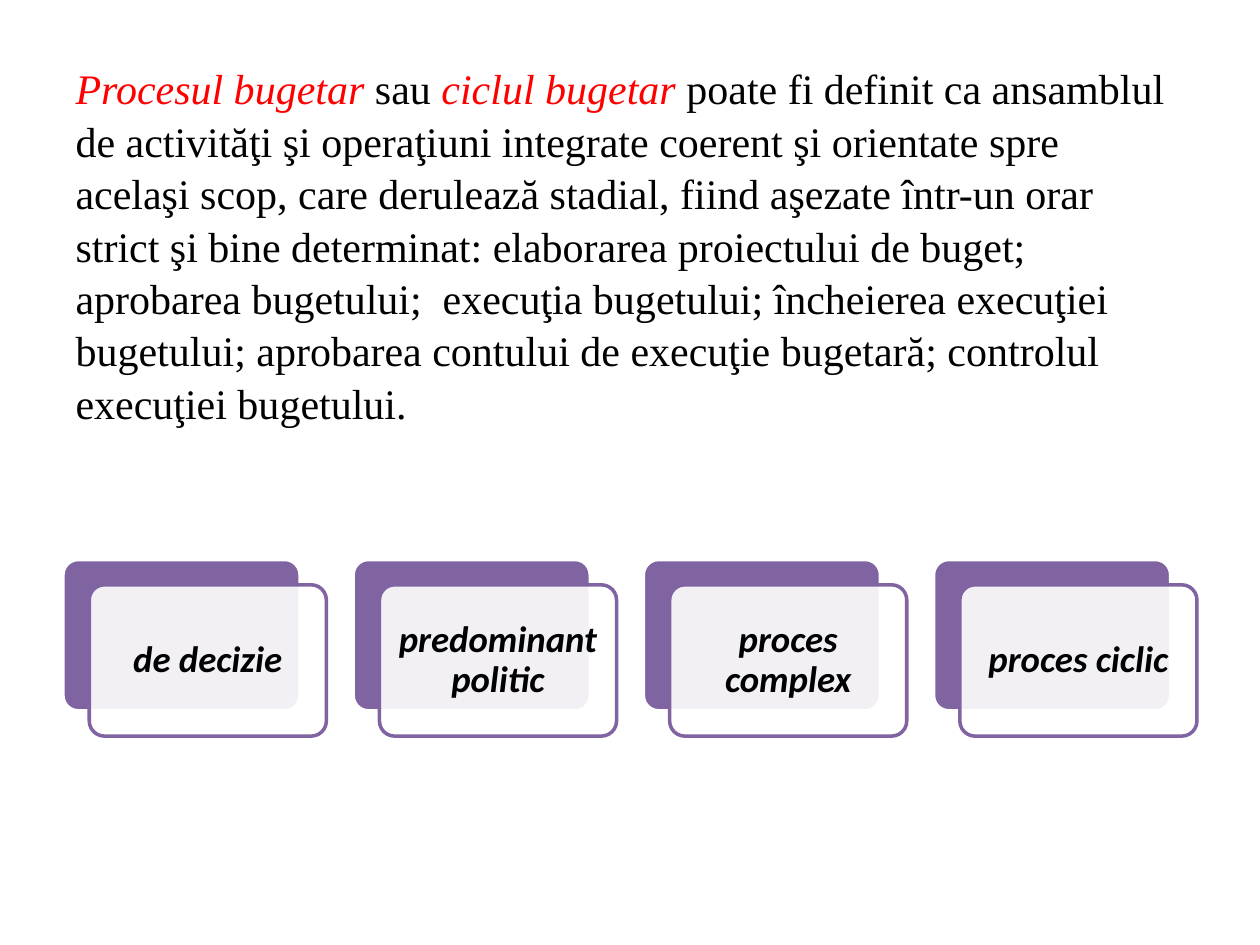
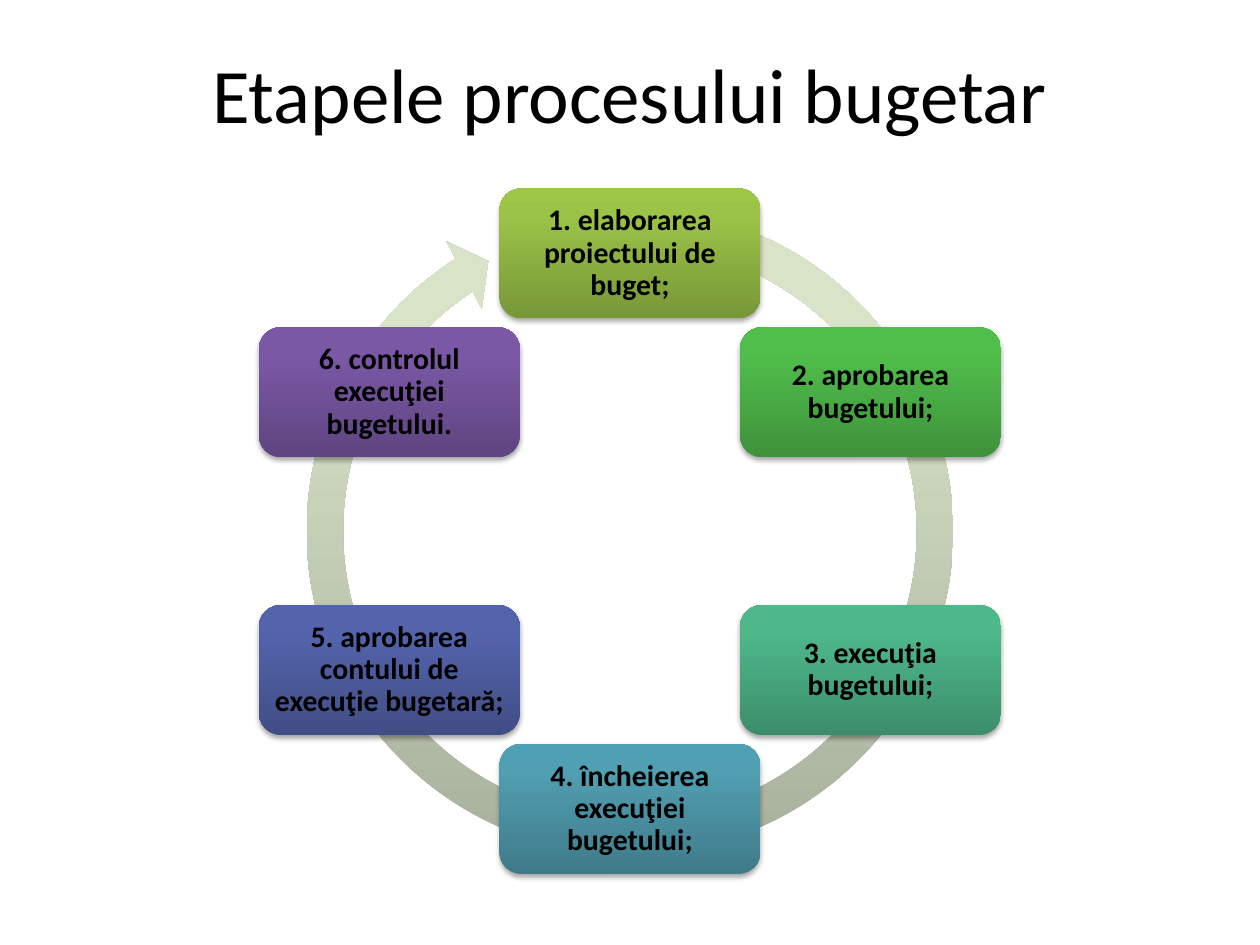
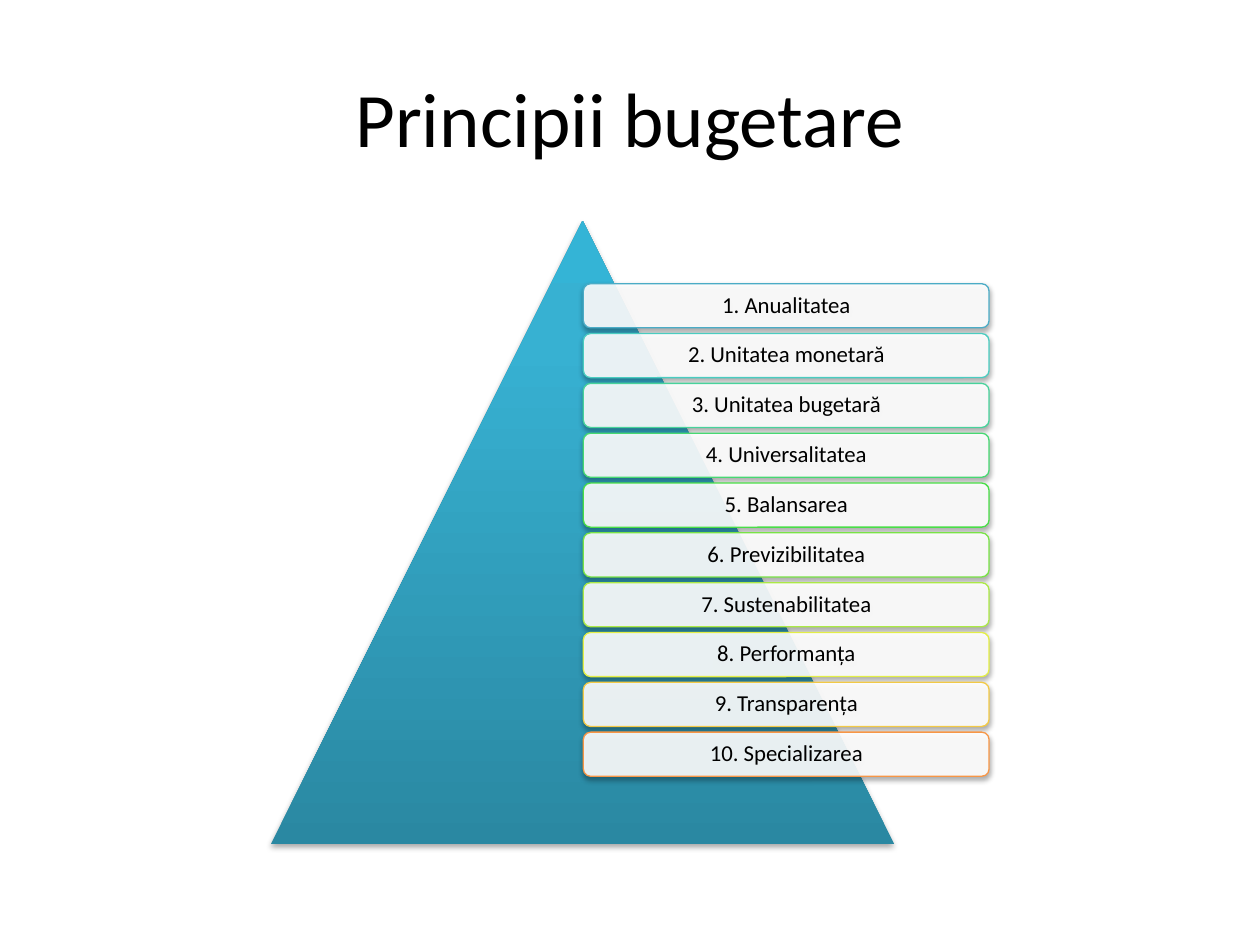
"""Build three slides on the budget process."""
from copy import deepcopy
from dataclasses import dataclass
from math import cos, radians, sin
from typing import Optional

from lxml.etree import SubElement as sub
from pptx import Presentation
from pptx.dml.color import RGBColor
from pptx.enum.shapes import MSO_SHAPE as Kind
from pptx.enum.text import MSO_ANCHOR as Anchor, MSO_AUTO_SIZE as Auto, PP_ALIGN as Align
from pptx.oxml.ns import qn
from pptx.shapes.autoshape import Shape
from pptx.slide import Slide
from pptx.util import Cm, Pt

BLACK = RGBColor(0x00, 0x00, 0x00)
WHITE = RGBColor(0xFF, 0xFF, 0xFF)
RED = RGBColor(0xFF, 0x00, 0x00)
PLUM = RGBColor(0x80, 0x64, 0xA2)
SANS = "Calibri"
SERIF = "Times New Roman"


@dataclass(frozen=True)
class Box:
    """A place on the slide, in centimetres."""
    left: float
    top: float
    width: float
    height: float


@dataclass(frozen=True)
class Fade:
    """A fill that runs from a dark foot to a light head."""
    foot: RGBColor
    mid: RGBColor
    head: RGBColor


@dataclass(frozen=True)
class Style:
    """How the words of a shape are set."""
    size: float
    inset: float
    bold: bool = False
    slant: bool = False


@dataclass(frozen=True)
class Part:
    """A piece of a title."""
    text: str
    tint: RGBColor = BLACK
    slant: bool = False


@dataclass(frozen=True)
class Step:
    """A stage of the cycle."""
    text: str
    fade: Fade


CARD = Style(21, 0.23, bold=True, slant=True)
STAGE = Style(17, 0.16, bold=True)
RULE = Style(13, 0.13)

INTRO = (
    Part("Procesul bugetar ", RED, True),
    Part("sau "),
    Part("ciclul bugetar ", RED, True),
    Part("poate fi definit ca ansamblul de activităţi şi operaţiuni integrate coerent "
         "şi orientate spre acelaşi scop, care derulează stadial, fiind aşezate într-un "
         "orar strict şi bine determinat: elaborarea proiectului de buget; aprobarea "
         "bugetului;  execuţia bugetului; încheierea execuţiei bugetului; aprobarea "
         "contului de execuţie bugetară; controlul execuţiei bugetului."),
)
TRAITS = ("de decizie", "predominant politic", "proces complex", "proces ciclic")

RING = Fade(RGBColor(0xA6, 0xAF, 0x9A), RGBColor(0xD8, 0xE3, 0xC8), RGBColor(0xD9, 0xE4, 0xC8))
PEAK = Fade(RGBColor(0x2A, 0x88, 0xA2), RGBColor(0x37, 0xB1, 0xD2), RGBColor(0x34, 0xB4, 0xD6))
STEPS = (
    Step("elaborarea proiectului de buget;", Fade(
        RGBColor(0x77, 0x97, 0x37), RGBColor(0x9B, 0xC3, 0x48), RGBColor(0x9D, 0xC7, 0x46))),
    Step("aprobarea bugetului;", Fade(
        RGBColor(0x3E, 0x92, 0x3A), RGBColor(0x50, 0xBE, 0x4B), RGBColor(0x4F, 0xC1, 0x49))),
    Step("execuţia bugetului;", Fade(
        RGBColor(0x3C, 0x8E, 0x6B), RGBColor(0x4E, 0xB8, 0x8B), RGBColor(0x4C, 0xBB, 0x8C))),
    Step("încheierea execuţiei bugetului;", Fade(
        RGBColor(0x3F, 0x7A, 0x89), RGBColor(0x51, 0x9F, 0xB2), RGBColor(0x50, 0xA0, 0xB5))),
    Step("aprobarea contului de execuţie bugetară;", Fade(
        RGBColor(0x41, 0x4D, 0x85), RGBColor(0x54, 0x64, 0xAC), RGBColor(0x53, 0x63, 0xAF))),
    Step("controlul execuţiei bugetului.", Fade(
        RGBColor(0x5F, 0x44, 0x80), RGBColor(0x7B, 0x58, 0xA6), RGBColor(0x7C, 0x57, 0xA8))),
)
RULES = (
    ("Anualitatea", RGBColor(0x4B, 0xAC, 0xC6)),
    ("Unitatea monetară", RGBColor(0x4A, 0xCC, 0xC0)),
    ("Unitatea bugetară", RGBColor(0x48, 0xD2, 0x9B)),
    ("Universalitatea", RGBColor(0x47, 0xD8, 0x72)),
    ("Balansarea", RGBColor(0x49, 0xDE, 0x47)),
    ("Previzibilitatea", RGBColor(0x79, 0xE3, 0x46)),
    ("Sustenabilitatea", RGBColor(0xAC, 0xE9, 0x46)),
    ("Performanța", RGBColor(0xE3, 0xEE, 0x46)),
    ("Transparența", RGBColor(0xF2, 0xC9, 0x46)),
    ("Specializarea", RGBColor(0xF7, 0x96, 0x46)),
)


def place(shape: Shape, box: Box) -> None:
    """Move and size a shape."""
    shape.left, shape.top = Cm(box.left), Cm(box.top)
    shape.width, shape.height = Cm(box.width), Cm(box.height)


def draw(slide: Slide, kind: Kind, box: Box, line: Optional[RGBColor] = None,
         width: float = 1) -> Shape:
    """Add a shape with no shadow and, if asked, an outline."""
    shape = slide.shapes.add_shape(
        kind, Cm(box.left), Cm(box.top), Cm(box.width), Cm(box.height))
    shape.shadow.inherit = False
    if line is None:
        shape.line.fill.background()
    else:
        shape.line.color.rgb = line
        shape.line.width = Pt(width)
    return shape


def paint(shape: Shape, tint: RGBColor, alpha: int = 100) -> None:
    """Fill a shape with one colour, see-through below 100."""
    shape.fill.solid()
    shape.fill.fore_color.rgb = tint
    if alpha < 100:
        mark = shape.element.spPr.find(f"{qn('a:solidFill')}/{qn('a:srgbClr')}")
        sub(mark, qn("a:alpha"), val=str(alpha * 1000))


def blend(shape: Shape, fade: Fade) -> None:
    """Fill a shape with an upward fade."""
    shape.fill.gradient()
    shape.fill.gradient_angle = 90
    stops = shape.element.spPr.find(f"{qn('a:gradFill')}/{qn('a:gsLst')}")
    stops.append(deepcopy(stops[-1]))
    tints = (fade.foot, fade.mid, fade.head)
    for stop, tint, spot in zip(shape.fill.gradient_stops, tints, (0, 0.8, 1)):
        stop.color.rgb = tint
        stop.position = spot


def shade(shape: Shape) -> None:
    """Give a shape a soft shadow below."""
    effects = shape.element.spPr.find(qn("a:effectLst"))
    cast = sub(effects, qn("a:outerShdw"), blurRad=str(Pt(3.1)), dist=str(Pt(1.8)),
               dir="5400000", rotWithShape="0")
    tint = sub(cast, qn("a:srgbClr"), val=str(BLACK))
    sub(tint, qn("a:alpha"), val="35000")


def write(shape: Shape, text: str, style: Style) -> None:
    """Set centred words in a shape."""
    frame = shape.text_frame
    frame.word_wrap = True
    frame.vertical_anchor = Anchor.MIDDLE
    frame.margin_left = frame.margin_right = Cm(style.inset)
    frame.margin_top = frame.margin_bottom = Cm(style.inset)
    para = frame.paragraphs[0]
    para.alignment = Align.CENTER
    para.line_spacing = 0.9
    run = para.add_run()
    run.text = text
    font = run.font
    font.name, font.size = SANS, Pt(style.size)
    font.bold, font.italic = style.bold, style.slant
    font.color.rgb = BLACK


def head(slide: Slide, parts: tuple[Part, ...], height: float, face: str = SANS,
         size: float = 44, align: Align = Align.CENTER, pitch: float = 1) -> None:
    """Fill the title of a slide, run by run."""
    title = slide.shapes.title
    place(title, Box(1.27, 0.76, 22.86, height))
    frame = title.text_frame
    frame.auto_size = Auto.NONE
    frame.vertical_anchor = Anchor.MIDDLE
    para = frame.paragraphs[0]
    para.alignment = align
    para.line_spacing = pitch
    for part in parts:
        run = para.add_run()
        run.text = part.text
        run.font.name, run.font.size = face, Pt(size)
        run.font.italic = part.slant
        run.font.color.rgb = part.tint


def define(slide: Slide) -> None:
    """Show what the process is, with a row of cards."""
    head(slide, INTRO, 8.33, SERIF, 24, Align.LEFT, 1.04)
    for col, text in enumerate(TRAITS):
        left = 1.27 + 5.85 * col
        back = draw(slide, Kind.ROUNDED_RECTANGLE, Box(left, 11.28, 4.78, 3.05), WHITE, 2)
        paint(back, PLUM)
        front = draw(slide, Kind.ROUNDED_RECTANGLE,
                     Box(left + 0.53, 11.79, 4.78, 3.05), PLUM, 2)
        paint(front, WHITE, 90)
        for card in (back, front):
            card.adjustments[0] = 0.1
        write(front, text, CARD)


def cycle(slide: Slide) -> None:
    """Show the stages around a ring."""
    head(slide, (Part("Etapele procesului bugetar"),), 2.21)
    mid, level, reach, side = 12.7, 10.71, 5.6, 13.82
    wide, high = 5.26, 2.62
    ring = draw(slide, Kind.CIRCULAR_ARROW,
                Box(mid - side / 2, level - side / 2, side, side))
    for slot, value in enumerate((0.053, 3.126, 142.263, 171.281, 0.055)):
        ring.adjustments[slot] = value
    blend(ring, RING)
    for count, step in enumerate(STEPS):
        turn = radians(360 / len(STEPS) * count)
        left = mid + reach * sin(turn) - wide / 2
        top = level - reach * cos(turn) - high / 2
        stage = draw(slide, Kind.ROUNDED_RECTANGLE, Box(left, top, wide, high))
        blend(stage, step.fade)
        shade(stage)
        write(stage, f"{count + 1}. {step.text}", STAGE)


def stack(slide: Slide) -> None:
    """Show the principles as bars on a peak."""
    head(slide, (Part("Principii bugetare"),), 3.18)
    peak = draw(slide, Kind.ISOSCELES_TRIANGLE, Box(5.46, 4.45, 12.57, 12.57))
    blend(peak, PEAK)
    shade(peak)
    first, last = 5.72, 14.76
    pitch = (last - first) / (len(RULES) - 1)
    for row, (name, tint) in enumerate(RULES):
        bar = draw(slide, Kind.ROUNDED_RECTANGLE,
                   Box(11.76, first + pitch * row, 8.18, 0.89), tint, 0.75)
        paint(bar, WHITE, 90)
        shade(bar)
        write(bar, f"{row + 1}. {name}", RULE)


def main() -> None:
    """Build the deck and save it."""
    deck = Presentation()
    deck.slide_width, deck.slide_height = Cm(25.4), Cm(19.05)
    for build in (define, cycle, stack):
        build(deck.slides.add_slide(deck.slide_layouts[5]))
    deck.save("out.pptx")


if __name__ == "__main__":
    main()
